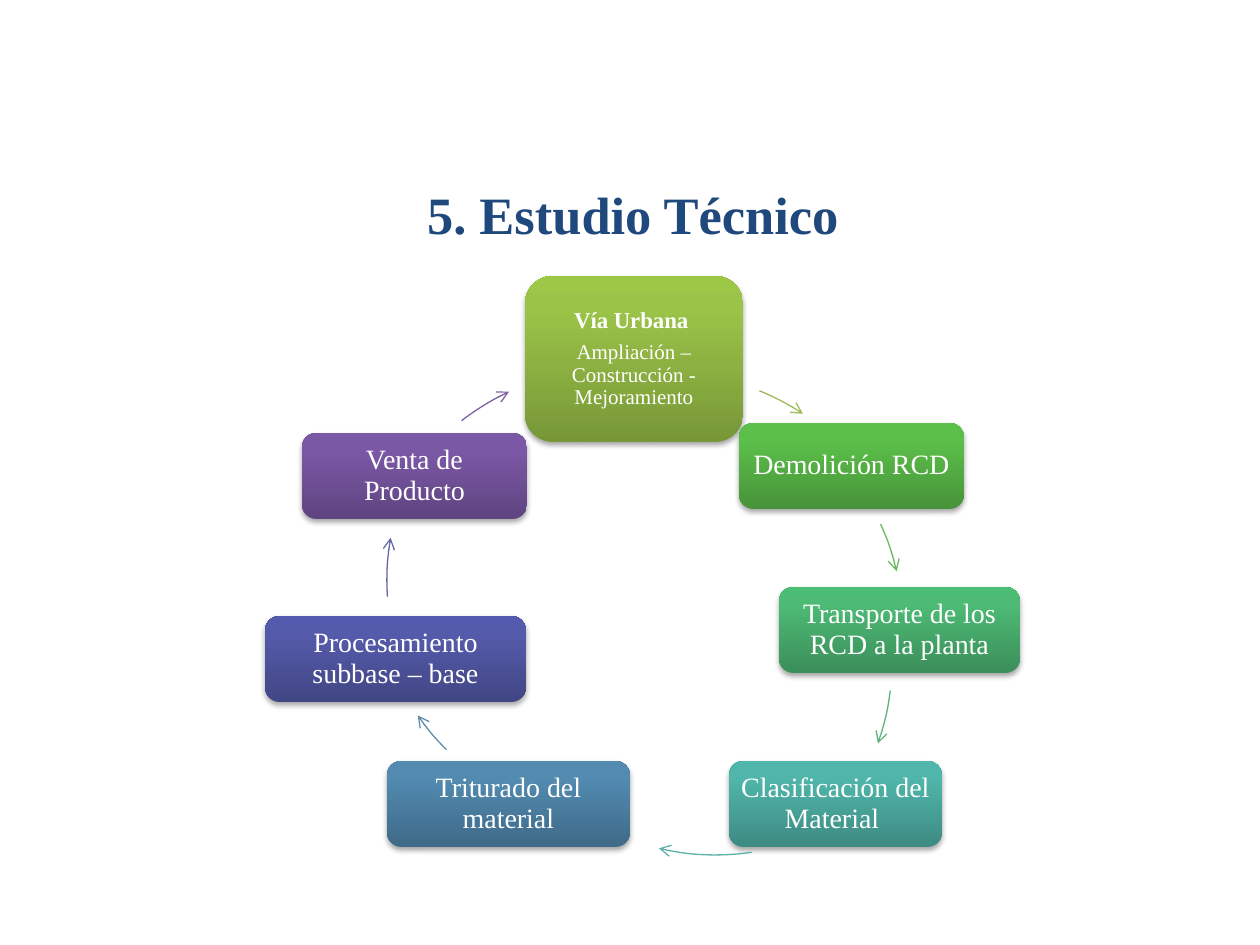
from dataclasses import dataclass

from lxml import etree
from pptx import Presentation
from pptx import util as u
from pptx.dml.color import RGBColor
from pptx.enum import shapes, text
from pptx.oxml import parse_xml
from pptx.oxml.ns import nsdecls, qn

PX = 914400 / 126


@dataclass(frozen=True)
class Theme:
    font: str = "Times New Roman"
    title: str = "1F497D"
    label: str = "FFFFFF"
    title_size: int = 30
    step_size: int = 16
    head_size: int = 13
    detail_size: int = 12


THEME = Theme()
STEP = THEME.step_size

# Each step: box, inset, gradient from bottom to top, lines of (wording, size, bold)
STEPS = [
    ((525, 276, 218, 166), 6, ("779737", "9BC348", "9DC746"),
     [("Vía Urbana ", THEME.head_size, True),
      ("Ampliación – Construcción - Mejoramiento", THEME.detail_size, False)]),
    ((739, 423, 225, 86), 8, ("479339", "5CBF4A", "5BC249"),
     [("Demolición RCD", STEP, False)]),
    ((779, 587, 241, 86), 8, ("3B8F5A", "4DBA75", "4BBD75"),
     [("Transporte de los RCD a la planta", STEP, False)]),
    ((729, 761, 213, 86), 8, ("3D8B83", "50B5AA", "4EB8AC"),
     [("Clasificación del Material ", STEP, False)]),
    ((387, 761, 243, 86), 8, ("3F6A88", "528AB0", "518BB3"),
     [("Triturado del material", STEP, False)]),
    ((265, 616, 261, 86), 8, ("414684", "555BAB", "545AAE"),
     [("Procesamiento subbase – base", STEP, False)]),
    ((302, 433, 225, 86), 8, ("5F4480", "7B58A6", "7C57A8"),
     [("Venta de Producto", STEP, False)]),
]

# Each arrow: left and top of its circle, start and end in clockwise degrees, colour
CIRCLE = 491
ARROWS = [
    (422, 373, 292, 303.5, "9BBB59"),
    (412, 381, 335.4, 347, "69B75B"),
    (401, 416, 6.8, 19.5, "5CB37C"),
    (470, 364, 81.5, 103.3, "5EAFA6"),
    (374, 330, 134.8, 145.2, "608CAB"),
    (387, 335, 176.2, 190, "6267A6"),
    (367, 369, 232.1, 245.1, "8064A2"),
]


def emu(*lengths):
    return [u.Emu(round(length * PX)) for length in lengths]


def style_font(font, size, color, bold):
    font.name = THEME.font
    font.size = u.Pt(size)
    font.bold = bold
    font.color.rgb = RGBColor.from_string(color)


def add_title(page, box, wording):
    title = page.shapes.title
    title.left, title.top, title.width, title.height = emu(*box)
    title.text_frame.text = wording
    title.text_frame.vertical_anchor = text.MSO_ANCHOR.MIDDLE
    para = title.text_frame.paragraphs[0]
    para.alignment = text.PP_ALIGN.CENTER
    style_font(para.font, THEME.title_size, THEME.title, True)


def set_gradient_and_shadow(shape, colors):
    """Shade the shape from bottom to top and drop a soft shadow below it."""
    stops = "".join(
        f'<a:gs pos="{place * 1000}"><a:srgbClr val="{color}"/></a:gs>'
        for place, color in zip((0, 80, 100), colors))
    gradient = parse_xml(
        f'<a:gradFill {nsdecls("a")} rotWithShape="1"><a:gsLst>{stops}</a:gsLst>'
        '<a:lin ang="16200000" scaled="0"/></a:gradFill>')
    shadow = parse_xml(
        f'<a:effectLst {nsdecls("a")}>'
        '<a:outerShdw blurRad="40000" dist="23000" dir="5400000" rotWithShape="0">'
        '<a:srgbClr val="000000"><a:alpha val="35000"/></a:srgbClr>'
        '</a:outerShdw></a:effectLst>')
    shape.line.fill.background()
    properties = shape.element.spPr
    properties.find(qn("a:prstGeom")).addnext(gradient)
    properties.append(shadow)


def add_step(page, box, inset, colors, lines):
    step = page.shapes.add_shape(shapes.MSO_SHAPE.ROUNDED_RECTANGLE, *emu(*box))
    set_gradient_and_shadow(step, colors)
    frame = step.text_frame
    frame.word_wrap = True
    frame.vertical_anchor = text.MSO_ANCHOR.MIDDLE
    (frame.margin_left, frame.margin_top,
     frame.margin_right, frame.margin_bottom) = emu(*[inset] * 4)
    frame.text = "\n".join(wording for wording, _, _ in lines)
    for para, (_, size, bold) in zip(frame.paragraphs, lines):
        para.alignment = text.PP_ALIGN.CENTER
        para.line_spacing = 0.9
        para.space_after = u.Pt(0.35 * size)
        style_font(para.font, size, THEME.label, bold)


def add_arrow(page, left, top, start, end, color):
    arrow = page.shapes.add_shape(
        shapes.MSO_SHAPE.ARC, *emu(left, top, CIRCLE, CIRCLE))
    # Arc angles are 60000ths of a degree, adjustments are 100000ths
    arrow.adjustments[0] = start * 0.6
    arrow.adjustments[1] = end * 0.6
    arrow.shadow.inherit = False
    arrow.fill.background()
    arrow.line.color.rgb = RGBColor.from_string(color)
    arrow.line.width = u.Pt(0.75)
    etree.SubElement(arrow.element.spPr.find(qn("a:ln")), qn("a:tailEnd"), type="arrow")


def add_cycle(page):
    for step, arrow in zip(STEPS, ARROWS):
        add_step(page, *step)
        add_arrow(page, *arrow)


def main():
    deck = Presentation()
    deck.slide_width, deck.slide_height = emu(1260, 945)
    page = deck.slides.add_slide(deck.slide_layouts[5])
    add_title(page, (66, 135, 1134, 158), "5. Estudio Técnico")
    add_cycle(page)
    deck.save("out.pptx")


if __name__ == "__main__":
    main()
